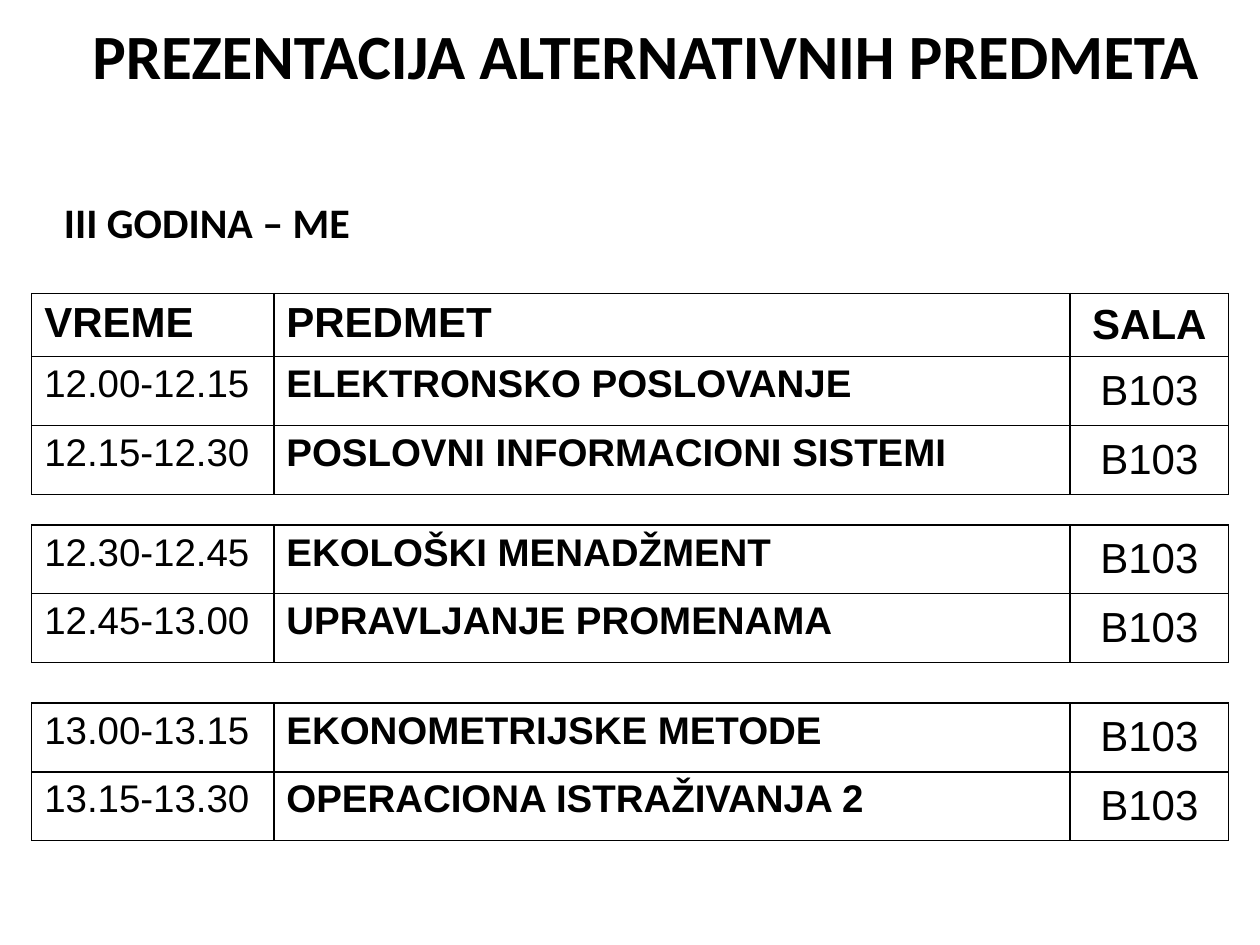
from lxml import etree
from pptx import Presentation
from pptx.dml.color import RGBColor
from pptx.enum.text import MSO_ANCHOR, PP_ALIGN
from pptx.oxml.ns import qn
from pptx.util import Cm, Pt

BLACK = RGBColor(0x00, 0x00, 0x00)
LEFT, CENTER = PP_ALIGN.LEFT, PP_ALIGN.CENTER
TOP, MIDDLE = MSO_ANCHOR.TOP, MSO_ANCHOR.MIDDLE

TABLE_LEFT = 0.64
COLUMN_WIDTHS = (4.88, 16.05, 3.2)
HEADER_HEIGHT, ROW_HEIGHT = 1.27, 1.39
COLUMN_ALIGNS = (LEFT, LEFT, CENTER)
COLUMN_ANCHORS = (TOP, TOP, MIDDLE)

HEADER_FORMATS = [{"name": "Arial", "size": Pt(24), "bold": True}] * 3
ROW_FORMATS = [
    {"name": "Arial", "size": Pt(22), "bold": False},
    {"name": "Arial", "size": Pt(22), "bold": True},
    {"name": "Arial", "size": Pt(24), "bold": False},
]
TITLE_FORMAT = {"name": "Calibri", "size": Pt(36), "bold": True}
SUBTITLE_FORMAT = {"name": "Calibri", "size": Pt(24), "bold": True}

HEADER = ("VREME", "PREDMET", "SALA")
# Top edge of each table, whether it has a header, and its rows
TABLES = [
    (5.92, True, [
        ("12.00-12.15", "ELEKTRONSKO POSLOVANJE", "B103"),
        ("12.15-12.30", "POSLOVNI INFORMACIONI SISTEMI", "B103"),
    ]),
    (10.58, False, [
        ("12.30-12.45", "EKOLOŠKI MENADŽMENT", "B103"),
        ("12.45-13.00", "UPRAVLJANJE PROMENAMA", "B103"),
    ]),
    (14.17, False, [
        ("13.00-13.15", "EKONOMETRIJSKE METODE", "B103"),
        ("13.15-13.30", "OPERACIONA ISTRAŽIVANJA 2", "B103"),
    ]),
]


def write_text(frame, text, formats, align):
    para = frame.paragraphs[0]
    para.alignment = align
    span = para.add_run()
    span.text = text
    for name, value in formats.items():
        setattr(span.font, name, value)
    span.font.color.rgb = BLACK


def add_heading(page, box, text, formats, align, anchor):
    frame = page.shapes.add_textbox(*map(Cm, box)).text_frame
    frame.word_wrap = True
    frame.vertical_anchor = anchor
    write_text(frame, text, formats, align)


def set_borders(cell):
    properties = cell._tc.get_or_add_tcPr()
    for position, side in enumerate(("a:lnL", "a:lnR", "a:lnT", "a:lnB")):
        line = etree.Element(qn(side), w=str(Pt(1)))
        fill = etree.SubElement(line, qn("a:solidFill"))
        etree.SubElement(fill, qn("a:srgbClr"), val=str(BLACK))
        properties.insert(position, line)


def add_schedule(page, left, top, has_header, rows):
    lines = [HEADER, *rows] if has_header else rows
    heights = [ROW_HEIGHT] * len(lines)
    if has_header:
        heights[0] = HEADER_HEIGHT
    table = page.shapes.add_table(
        len(lines), len(COLUMN_WIDTHS), Cm(left), Cm(top),
        Cm(sum(COLUMN_WIDTHS)), Cm(sum(heights))).table
    table.first_row = has_header
    table.horz_banding = False
    for column, width in zip(table.columns, COLUMN_WIDTHS):
        column.width = Cm(width)
    for row, height, texts in zip(table.rows, heights, lines):
        row.height = Cm(height)
        formats = HEADER_FORMATS if texts is HEADER else ROW_FORMATS
        for cell, text, style, align, anchor in zip(
                row.cells, texts, formats, COLUMN_ALIGNS, COLUMN_ANCHORS):
            cell.fill.background()
            cell.vertical_anchor = anchor
            write_text(cell.text_frame, text, style, align)
            set_borders(cell)


def main():
    deck = Presentation()
    deck.slide_width, deck.slide_height = Cm(25.4), Cm(19.05)
    page = deck.slides.add_slide(deck.slide_layouts[6])
    add_heading(page, (0, -1.07, 26.04, 4.32),
                "PREZENTACIJA ALTERNATIVNIH PREDMETA",
                TITLE_FORMAT, CENTER, MIDDLE)
    add_heading(page, (1.04, 3.84, 13.77, 2.31), "III GODINA – ME",
                SUBTITLE_FORMAT, LEFT, TOP)
    for top, has_header, rows in TABLES:
        add_schedule(page, TABLE_LEFT, top, has_header, rows)
    deck.save("out.pptx")


if __name__ == "__main__":
    main()
